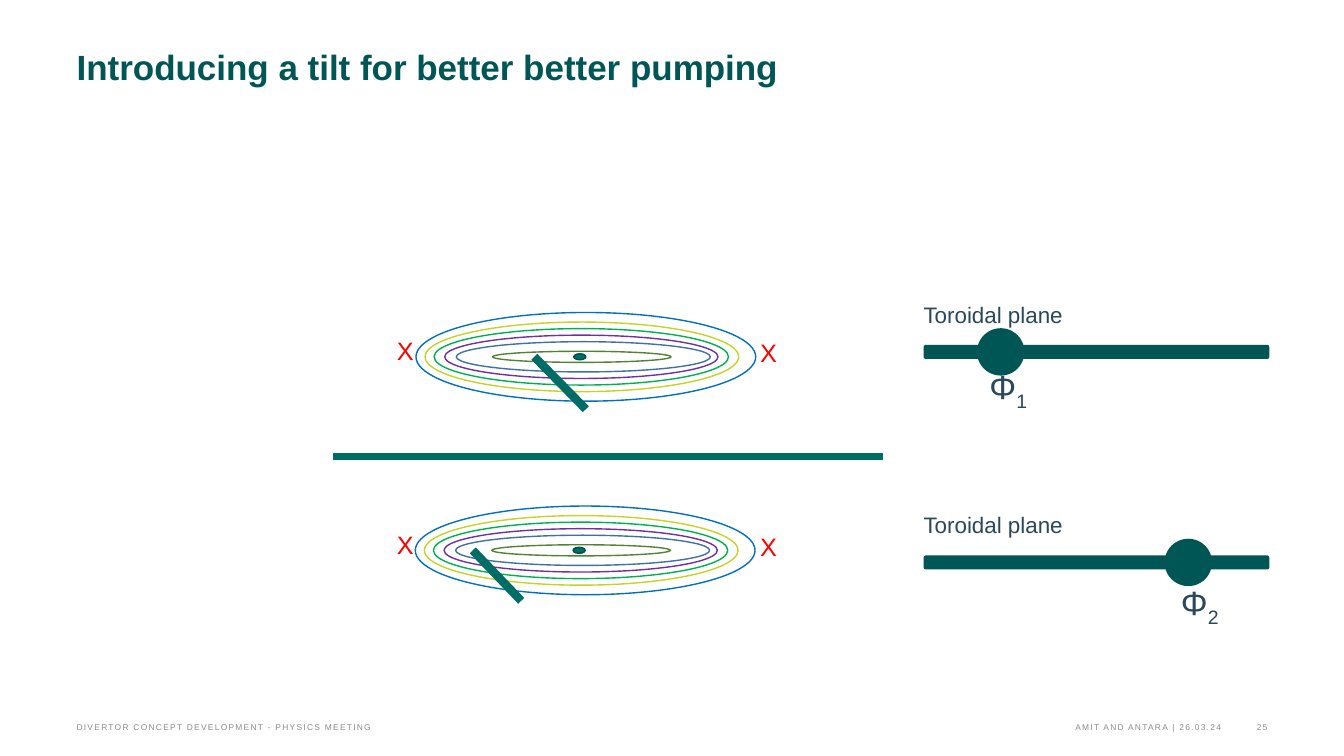
import pptx
import pptx.util
import pptx.dml.color
import pptx.enum.shapes
import pptx.enum.text
import pptx.oxml.ns
from lxml import etree

Pt = pptx.util.Pt
SHAPE = pptx.enum.shapes.MSO_SHAPE
ALIGN = pptx.enum.text.PP_ALIGN
ANCHOR = pptx.enum.text.MSO_ANCHOR

DARK, TEAL, SLATE, GREY = "005555", "006C66", "29485D", "8C8C8C"


def rgb(color):
    return pptx.dml.color.RGBColor.from_string(color)


def write(p, text, size=18, color=SLATE, bold=False, spacing=None, baseline=None):
    """Add one formatted run to a paragraph."""
    r = p.add_run()
    r.text = text
    r.font.name, r.font.size, r.font.bold = "Arial", Pt(size), bold
    r.font.color.rgb = rgb(color)
    for name, value in (("spc", spacing), ("baseline", baseline)):
        if value is not None:
            r._r.get_or_add_rPr().set(name, str(value))


class Slide:
    """All lengths are percentages of the slide's width and height."""

    def __init__(self, prs):
        self.width, self.height = prs.slide_width, prs.slide_height
        self.s = prs.slides.add_slide(prs.slide_layouts[5])

    def x(self, share):
        return round(self.width * share / 100)

    def y(self, share):
        return round(self.height * share / 100)

    def box(self, left, top, width, height):
        return self.x(left), self.y(top), self.x(width), self.y(height)

    def frame(self, tf, inset=True, wrap=True, anchor=ANCHOR.TOP, align=ALIGN.LEFT, leading=None):
        tf.word_wrap, tf.vertical_anchor = wrap, anchor
        if not inset:
            tf.margin_left = tf.margin_right = tf.margin_top = tf.margin_bottom = 0
        p = tf.paragraphs[0]
        p.alignment = align
        if leading:
            p.line_spacing = Pt(leading)
        return p

    def title(self, text, *place):
        sp = self.s.shapes.title
        sp.left, sp.top, sp.width, sp.height = self.box(*place)
        sp.text_frame.auto_size = pptx.enum.text.MSO_AUTO_SIZE.NONE
        p = self.frame(sp.text_frame, inset=False, leading=28)
        write(p, text, size=25, color=DARK, bold=True)

    def text(self, *place, **layout):
        sp = self.s.shapes.add_textbox(*self.box(*place))
        return self.frame(sp.text_frame, **layout)

    def shape(self, kind, *place, fill=None, line=None):
        sp = self.s.shapes.add_shape(kind, *self.box(*place))
        sp.shadow.inherit = False
        if fill:
            sp.fill.solid()
            sp.fill.fore_color.rgb = rgb(fill)
        else:
            sp.fill.background()
        if line:
            sp.line.color.rgb, sp.line.width = rgb(line), Pt(1)
        else:
            sp.line.fill.background()

    def line(self, x1, y1, x2, y2, width):
        sp = self.s.shapes.add_connector(
            pptx.enum.shapes.MSO_CONNECTOR.STRAIGHT,
            self.x(x1), self.y(y1), self.x(x2), self.y(y2))
        sp.line.color.rgb, sp.line.width = rgb(TEAL), Pt(width)
        etree.SubElement(sp._element.spPr, pptx.oxml.ns.qn("a:effectLst"))


# Flux surfaces: offset from the island's left edge, width, height, fill, line
SURFACES = [
    (0.68, 23.33, 9.2, None, "C6D325"),
    (1.35, 21.9, 7.47, None, "00B050"),
    (2.14, 20.33, 5.73, None, "7030A0"),
    (3, 18.9, 4, None, "41719C"),
    (0, 25.28, 11.73, None, "0070C0"),
    (5.7, 13.28, 1.47, None, "548235"),
    (11.74, 0.9, 0.8, TEAL, "00504B"),
]


def island(s, left, middle):
    for offset, width, height, fill, line in SURFACES:
        s.shape(SHAPE.OVAL, left + offset, middle - height / 2, width, height,
                fill=fill, line=line)
    # X-points on both sides
    for x, rise in ((28.8, 3.47), (55.81, 3.2)):
        write(s.text(x, middle - rise, 3.53, 5.33), "X", color="FF0000")


def toroidal_plane(s, middle, marker, phi_x, phi_y, index):
    left, bar, dot_w, dot_h = 68.72, 1.87, 3.53, 6.27
    s.shape(SHAPE.ROUNDED_RECTANGLE, left, middle - bar / 2, 25.73, bar, fill=DARK)
    s.shape(SHAPE.OVAL, marker, middle - dot_h / 2, dot_w, dot_h, fill=DARK)
    write(s.text(left, middle - 7.47, 15, 4, inset=False, leading=23),
          "Toroidal plane", size=16)
    p = s.text(phi_x, phi_y, 3.3, 4.27, inset=False, align=ALIGN.CENTER, leading=23)
    write(p, "Φ", size=24)
    write(p, index, size=24, baseline=-25000)


def main():
    prs = pptx.Presentation()
    prs.slide_width, prs.slide_height = pptx.util.Inches(13.33), pptx.util.Inches(7.5)
    s = Slide(prs)
    s.title("Introducing a tilt for better better pumping", 5.7, 6.4, 78.54, 11.47)

    # Islands and the divider between them
    upper, lower = 47.2, 72.8
    island(s, 30.95, upper)
    island(s, 30.9, lower)
    s.line(24.76, 60.4, 65.72, 60.4, 4.5)

    # Toroidal positions
    toroidal_plane(s, 46.55, 72.69, 73.37, 50.27, "1")
    toroidal_plane(s, 74.4, 86.65, 87.62, 78.8, "2")

    # Tilted targets
    s.line(39.76, upper, 43.59, 54.13, 6)
    s.line(35.18, lower, 38.78, 79.47, 6)

    # Footer
    for left, width, align, text in (
        (33.83, 57.02, ALIGN.RIGHT, "AMIT AND ANTARA | 26.03.24"),
        (5.7, 49.96, ALIGN.LEFT, "DIVERTOR CONCEPT DEVELOPMENT - PHYSICS MEETING"),
        (91.6, 2.7, ALIGN.RIGHT, "25"),
    ):
        p = s.text(left, 94.67, width, 2.13, inset=False, wrap=False,
                   anchor=ANCHOR.BOTTOM, align=align)
        write(p, text, size=6, color=GREY, spacing=90)

    prs.save("out.pptx")


if __name__ == "__main__":
    main()
